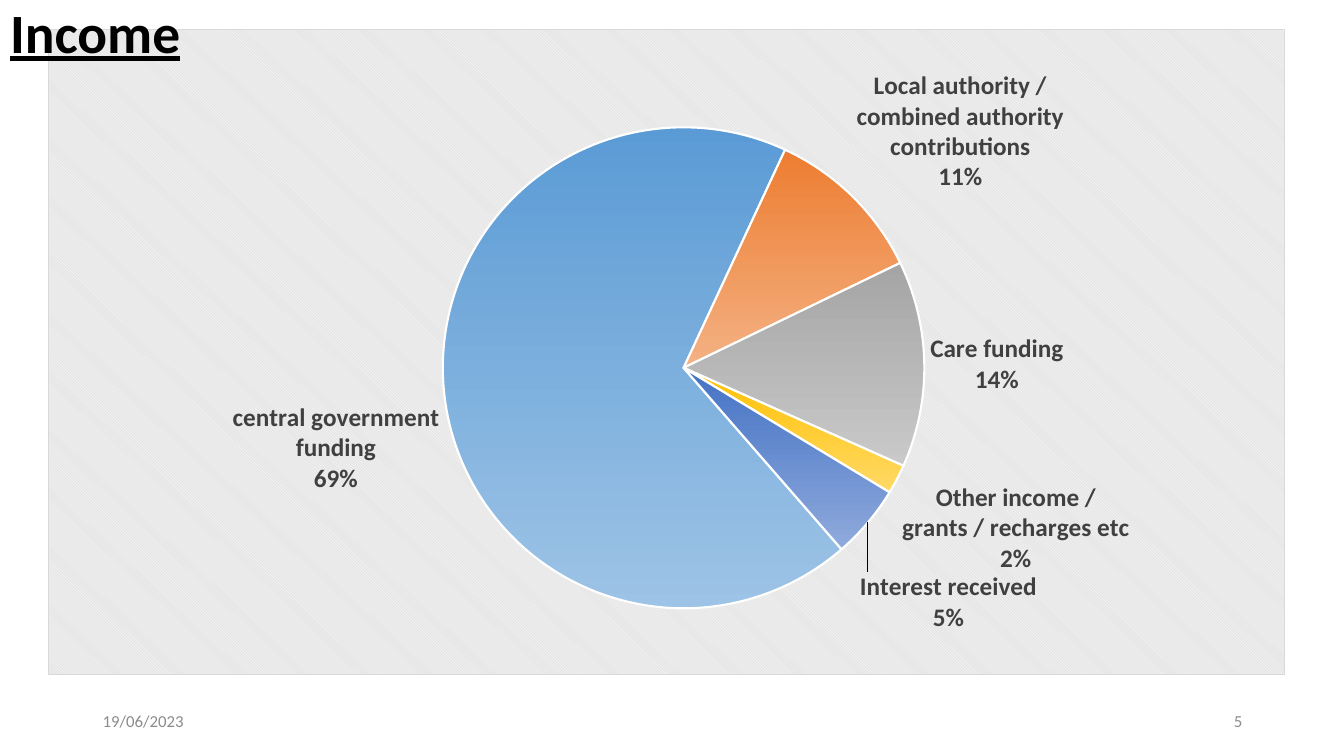
from lxml import etree
from pptx import Presentation
from pptx.chart.data import CategoryChartData
from pptx.dml.color import RGBColor
from pptx.enum.chart import XL_CHART_TYPE as ChartType, XL_LABEL_POSITION as LabelPosition
from pptx.enum.text import MSO_ANCHOR as Anchor, MSO_AUTO_SIZE as AutoSize, PP_ALIGN as Align
from pptx.oxml import parse_xml
from pptx.oxml.ns import nsdecls, qn
from pptx.util import Inches, Pt

# Content
TITLE = "Income"
INCOME = [  # source, percent, gradient top, gradient bottom
    ("central government funding", 69, "5B9BD5", "9DC3E6"),
    ("Local authority / combined authority contributions", 11, "ED7D31", "F4B183"),
    ("Care funding", 14, "A5A5A5", "C9C9C9"),
    ("Other income / grants / recharges etc", 2, "FFC000", "FFD966"),
    ("Interest received", 5, "4472C4", "8FAADC"),
]
FOOTERS = [("19/06/2023", 0.92, Align.LEFT), ("5", 9.42, Align.RIGHT)]
FONT = "Calibri"
START_ANGLE = 139
CHART_BOX = (0.48, 0.29, 12.27, 6.41)
PIE_CENTRE, PIE_SIZE = (6.78, 3.65), 4.78
INTEREST_SHIFT = (-0.01, 0.07)  # share of the chart's width and height


def colour(text):
    return RGBColor.from_string(text)


def set_font(font, size, hex_colour, bold=False):
    font.name, font.size, font.bold = FONT, Pt(size), bold
    font.color.rgb = colour(hex_colour)


def manual_layout(target="", **places):
    """Build a chart layout from shares of the chart's width and height."""
    layout = etree.Element(qn("c:layout"))
    manual = etree.SubElement(layout, qn("c:manualLayout"))
    if target:
        etree.SubElement(manual, qn("c:layoutTarget")).set("val", target)
        for mode in ("xMode", "yMode"):
            etree.SubElement(manual, qn("c:" + mode)).set("val", "edge")
    for name, share in places.items():
        etree.SubElement(manual, qn("c:" + name)).set("val", f"{share:.4f}")
    return layout


deck = Presentation()
deck.slide_width, deck.slide_height = Inches(13.33), Inches(7.5)
page = deck.slides.add_slide(deck.slide_layouts[5])

# Date and page number
for text, left, align in FOOTERS:
    box = page.shapes.add_textbox(Inches(left), Inches(6.95), Inches(3), Inches(0.4))
    frame = box.text_frame
    frame.word_wrap, frame.vertical_anchor = True, Anchor.MIDDLE
    para = frame.paragraphs[0]
    para.text, para.alignment = text, align
    set_font(para.font, 12, "8C8C8C")

# Pie chart
data = CategoryChartData()
data.categories = [row[0] for row in INCOME]
data.add_series("Series 1", [row[1] for row in INCOME])
chart = page.shapes.add_chart(
    ChartType.PIE, *[Inches(length) for length in CHART_BOX], data).chart
chart.has_title = chart.has_legend = False
set_font(chart.font, 10, "000000")

# Slices
plot = chart.plots[0]
plot.vary_by_categories = True
series = plot.series[0]
for index, (_, _, top, bottom) in enumerate(INCOME):
    look = series.points[index].format
    look.fill.gradient()
    look.fill.gradient_angle = 270
    for stop, shade, position in zip(look.fill.gradient_stops, (top, bottom), (0, 1)):
        stop.color.rgb = colour(shade)
        stop.position = position
    look.line.color.rgb = colour("FFFFFF")
    look.line.width = Pt(1.5)

# Labels: the values are percentages already
labels = series.data_labels
set_font(labels.font, 18, "404040", bold=True)
labels.number_format, labels.number_format_is_linked = '0"%"', False
labels.show_category_name = labels.show_value = True
labels.show_percentage = labels.show_legend_key = False
labels.position = LabelPosition.OUTSIDE_END
label_xml = series._element.find(qn("c:dLbls"))
leader = label_xml.find(qn("c:showLeaderLines"))
if leader is None:
    leader = etree.SubElement(label_xml, qn("c:showLeaderLines"))
leader.set("val", "1")
separator = etree.Element(qn("c:separator"))
separator.text = "\n"
label_xml.find(qn("c:showBubbleSize")).addnext(separator)

# The last label is moved down, on a leader line
interest = parse_xml(
    f'<c:dLbl {nsdecls("c")}><c:idx val="{len(INCOME) - 1}"/>'
    '<c:dLblPos val="bestFit"/><c:showLegendKey val="0"/><c:showVal val="1"/>'
    '<c:showCatName val="1"/><c:showSerName val="0"/><c:showPercent val="0"/>'
    '<c:showBubbleSize val="0"/><c:separator>\n</c:separator></c:dLbl>')
interest[0].addnext(manual_layout(x=INTEREST_SHIFT[0], y=INTEREST_SHIFT[1]))
label_xml.insert(0, interest)

# Pie angle and place
angle = plot._element.find(qn("c:firstSliceAng"))
if angle is None:
    angle = etree.SubElement(plot._element, qn("c:firstSliceAng"))
angle.set("val", str(START_ANGLE))
left, top, width, height = CHART_BOX
area = chart._chartSpace.chart.plotArea
for old in area.findall(qn("c:layout")):
    area.remove(old)
area.insert(0, manual_layout(
    "inner",
    x=(PIE_CENTRE[0] - PIE_SIZE / 2 - left) / width,
    y=(PIE_CENTRE[1] - PIE_SIZE / 2 - top) / height,
    w=PIE_SIZE / width, h=PIE_SIZE / height))

# Striped chart background
chart._chartSpace.chart.addnext(parse_xml(
    f'<c:spPr {nsdecls("c", "a")}><a:pattFill prst="dkDnDiag">'
    '<a:fgClr><a:srgbClr val="FFFFFF"/></a:fgClr>'
    '<a:bgClr><a:srgbClr val="E6E6E6"/></a:bgClr></a:pattFill>'
    '<a:ln w="9525"><a:solidFill><a:srgbClr val="D9D9D9"/></a:solidFill></a:ln></c:spPr>'))

# Title, in front of the chart
title = page.shapes.title
title.left, title.top = Inches(0), Inches(0)
title.width, title.height = Inches(11.5), Inches(0.7)
frame = title.text_frame
frame.auto_size, frame.vertical_anchor = AutoSize.NONE, Anchor.MIDDLE
para = frame.paragraphs[0]
para.text, para.alignment, para.line_spacing = TITLE, Align.LEFT, 0.9
set_font(para.font, 39.6, "000000", bold=True)
para.font.underline = True
page.shapes._spTree.append(title._element)

deck.save("out.pptx")
